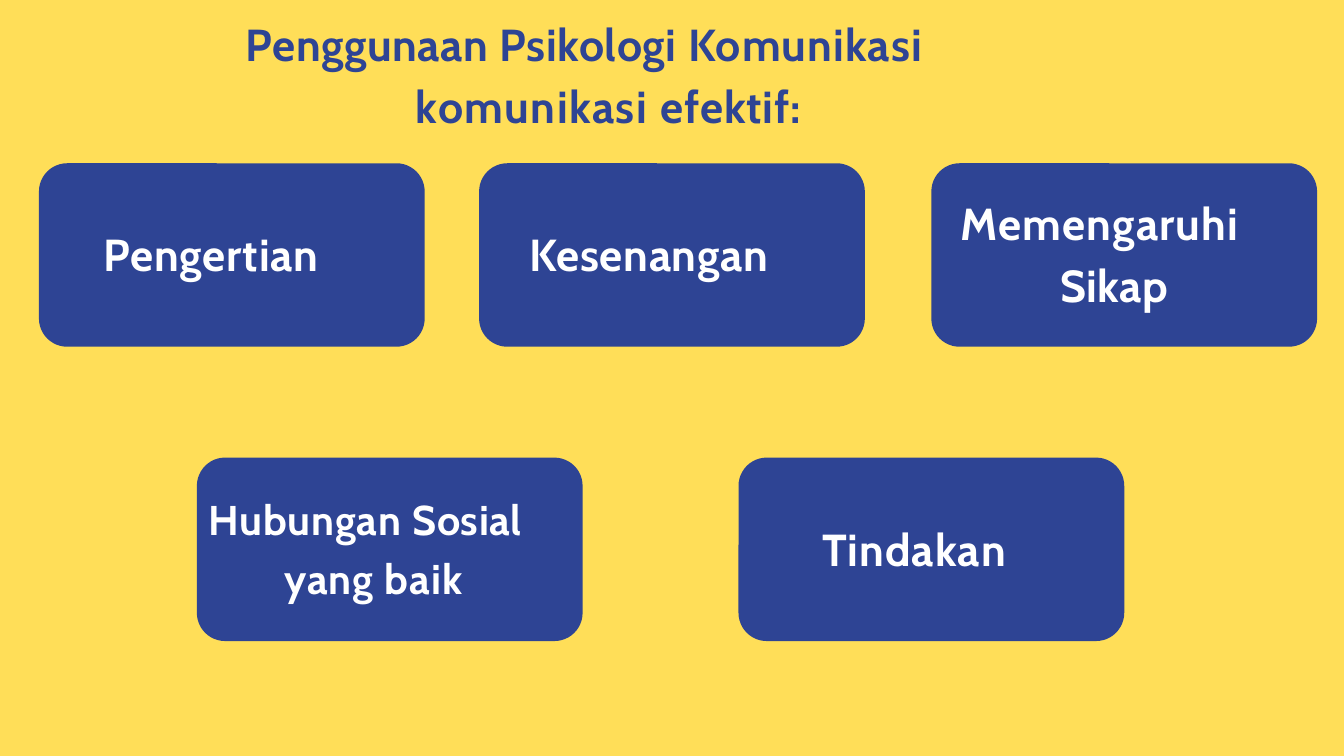
import pptx
import pptx.util
import pptx.dml.color
import pptx.enum.shapes
from dataclasses import dataclass

Inches, Pt = pptx.util.Inches, pptx.util.Pt
RGB = pptx.dml.color.RGBColor.from_string


@dataclass
class Theme:
    back: RGB = RGB("FFDE58")
    blue: RGB = RGB("2E4494")
    white: RGB = RGB("FFFFFF")
    font: str = "Cabin"
    large: float = 48
    small: float = 44.5


theme = Theme()


def add_text(slide, place, runs, size, color, hang=0, lines=None):
    """Add one paragraph; runs pair text with letter spacing in points."""
    box = slide.shapes.add_textbox(*[Inches(v) for v in place])
    frame = box.text_frame
    frame.word_wrap = True
    frame.margin_left = frame.margin_right = frame.margin_bottom = 0
    frame.margin_top = Inches(0.01)
    para = frame.paragraphs[0]
    para.space_before = Pt(1)
    if lines:
        para.line_spacing = lines
    font = para.font
    font.name, font.size, font.bold = theme.font, Pt(size), True
    font.color.rgb = color
    # Hanging indent: the second line starts further in
    props = para._p.get_or_add_pPr()
    props.set("marL", str(Inches(hang)))
    props.set("indent", str(-Inches(hang)))
    for text, gap in runs:
        run = para.add_run()
        run.text = text
        run._r.get_or_add_rPr().set("spc", str(round(gap * 100)))


# Slide and background
deck = pptx.Presentation()
deck.slide_width, deck.slide_height = Inches(20), Inches(11.25)
slide = deck.slides.add_slide(deck.slide_layouts[6])
fill = slide.background.fill
fill.solid()
fill.fore_color.rgb = theme.back

# Title
title = [("Penggunaan ", 0.6), ("Psikologi ", 0.7), ("Komunikasi ", 1.2),
         ("komunikasi ", 1.6), ("efektif:", 0.9)]
add_text(slide, (3.66, 0.11, 12.68, 1.88), title, theme.large, theme.blue,
         2.53, 1.16)

# Cards: three above, two below
wide, high, round_by = 5.74, 2.73, 0.42
top, low = 2.43, 6.81
for left, y in [(0.58, top), (7.13, top), (13.86, top), (2.93, low), (10.99, low)]:
    card = slide.shapes.add_shape(
        pptx.enum.shapes.MSO_SHAPE.ROUNDED_RECTANGLE,
        Inches(left), Inches(y), Inches(wide), Inches(high))
    card.adjustments[0] = round_by / high
    card.shadow.inherit = False
    card.fill.solid()
    card.fill.fore_color.rgb = theme.blue
    card.line.fill.background()

# One-line labels
for text, gap, left, y, width in [
    ("Pengertian", 0.9, 1.54, top + 0.93, 3.82),
    ("Kesenangan", 0.8, 7.88, top + 0.93, 4.24),
    ("Tindakan", 1.1, 12.24, low + 0.94, 3.23),
]:
    add_text(slide, (left, y, width, 0.83), [(text, gap)], theme.large, theme.white)

# Two-line labels
add_text(slide, (14.3, 2.77, 4.85, 1.88), [("Memengaruhi ", 1.2), ("Sikap", 0.6)],
         theme.large, theme.white, 1.48, 1.16)
social = [("Hubungan ", 0.9), ("Sosial ", 0.6), ("yang ", 0.9), ("baik", 1.4)]
add_text(slide, (3.1, 7.22, 5.38, 1.76), social, theme.small, theme.white, 1.13, 1.17)

deck.save("out.pptx")
